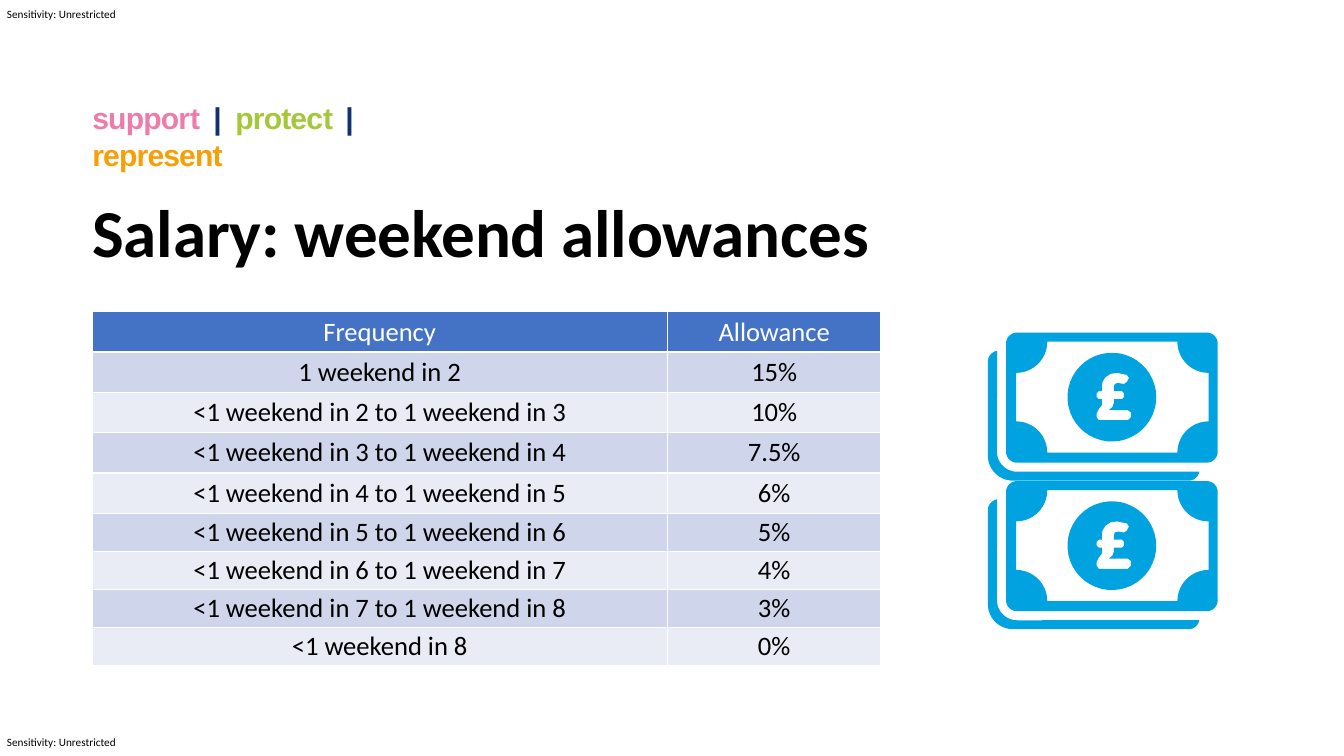
import math

import lxml.etree
import pptx
import pptx.dml.color
import pptx.enum.shapes
import pptx.enum.text
import pptx.oxml.ns
import pptx.util

Pt = pptx.util.Pt
qn = pptx.oxml.ns.qn

BLACK, WHITE, NAVY = "000000", "FFFFFF", "12326E"
PINK, GREEN, ORANGE = "EE7BA9", "A5C73A", "F69F07"
HEADER_BLUE, BANDS, NOTE_BLUE = "4472C4", ("E9EBF5", "CFD5EA"), "00A3E0"

ALLOWANCES = [
    ("Frequency", "Allowance"),
    ("1 weekend in 2", "15%"),
    ("<1 weekend in 2 to 1 weekend in 3", "10%"),
    ("<1 weekend in 3 to 1 weekend in 4", "7.5%"),
    ("<1 weekend in 4 to 1 weekend in 5", "6%"),
    ("<1 weekend in 5 to 1 weekend in 6", "5%"),
    ("<1 weekend in 6 to 1 weekend in 7", "4%"),
    ("<1 weekend in 7 to 1 weekend in 8", "3%"),
    ("<1 weekend in 8", "0%"),
]

# Pound sign outline, in points from the banknote's top left corner
POUND = [
    (102.2, 60.5), (100, 62.6), (79.2, 62.6), (77.8, 60.5), (77.8, 57.6),
    (79.2, 54.7), (81.4, 51.8), (81.4, 47.5), (79.2, 47.5), (77.8, 46.1),
    (77.8, 43.2), (79.2, 41.8), (81.4, 41.8), (81.4, 38.9), (82, 35),
    (84.2, 31.7), (87.5, 29.5), (92.2, 28.8), (99.4, 30.2), (100.8, 32.4),
    (99.4, 35.3), (97.2, 36.7), (92.9, 36), (90.7, 36.7), (90, 38.9),
    (90, 41.8), (95.8, 41.8), (97.2, 43.2), (97.2, 46.1), (95.8, 47.5),
    (90, 47.5), (90, 50.4), (89, 53.2), (86.4, 55.4), (100, 55.4),
    (102.2, 56.9),
]


def color(hex_value):
    return pptx.dml.color.RGBColor.from_string(hex_value)


def style_span(span, size, hex_value, font="Calibri", bold=False, spacing=0):
    span.font.size = Pt(size)
    span.font.name = font
    span.font.bold = bold
    span.font.color.rgb = color(hex_value)
    if spacing:
        span._r.get_or_add_rPr().set("spc", str(round(spacing * 100)))


def add_box(page, left, top, width, height, wrap=True):
    """Add an empty text box without margins and return its paragraph."""
    box = page.shapes.add_textbox(Pt(left), Pt(top), Pt(width), Pt(height))
    frame = box.text_frame
    frame.word_wrap = wrap
    frame.margin_left = frame.margin_top = 0
    frame.margin_right = frame.margin_bottom = 0
    return frame.paragraphs[0]


def add_label(page, top):
    para = add_box(page, 5, top, 79, 9.6, wrap=False)
    para.text = "Sensitivity: Unrestricted"
    style_span(para.runs[0], 8, BLACK)


def add_motto(page):
    para = add_box(page, 66, 71.3, 289, 27)
    para.space_before = Pt(0.7)
    tabs = lxml.etree.SubElement(para._p.get_or_add_pPr(), qn("a:tabLst"))
    for position in (86.4, 102.2, 180.7, 196.6):
        lxml.etree.SubElement(tabs, qn("a:tab"), pos=str(Pt(position)), algn="l")
    for text, hex_value, spacing in (
        ("suppor", PINK, -0.6), ("t\t", PINK, 0), ("|\t", NAVY, 0),
        ("protec", GREEN, -0.6), ("t\t", GREEN, 0), ("|\t", NAVY, 0),
        ("represent", ORANGE, -0.6),
    ):
        span = para.add_run()
        span.text = text
        style_span(span, 21.5, hex_value, "Arial", True, spacing)


def add_title(page):
    para = add_box(page, 66, 136.1, 665, 59)
    para.text = "Salary: weekend allowances"
    para.space_before = Pt(0.7)
    style_span(para.runs[0], 47.9, BLACK, bold=True, spacing=-0.1)


def fill_cell(cell, text, text_color, fill_color):
    cell.margin_left = cell.margin_right = Pt(4.5)
    cell.margin_top = cell.margin_bottom = Pt(2.2)
    cell.vertical_anchor = pptx.enum.text.MSO_ANCHOR.MIDDLE
    # White borders come before the fill in the cell properties
    properties = cell._tc.get_or_add_tcPr()
    for side in ("a:lnL", "a:lnR", "a:lnT", "a:lnB"):
        line = lxml.etree.SubElement(properties, qn(side), w=str(Pt(1)))
        solid = lxml.etree.SubElement(line, qn("a:solidFill"))
        lxml.etree.SubElement(solid, qn("a:srgbClr"), val=WHITE)
    cell.fill.solid()
    cell.fill.fore_color.rgb = color(fill_color)
    para = cell.text_frame.paragraphs[0]
    para.text = text
    para.alignment = pptx.enum.text.PP_ALIGN.CENTER
    style_span(para.runs[0], 19, text_color)


def add_allowance_table(page):
    widths = (411, 152.6)
    heights = [28.8] * 5 + [27.2] * 4
    frame = page.shapes.add_table(
        len(ALLOWANCES), len(widths), Pt(65.7), Pt(222.7),
        Pt(sum(widths)), Pt(sum(heights)))
    table = frame.table
    for column, width in zip(table.columns, widths):
        column.width = Pt(width)
    for index, (row, values) in enumerate(zip(table.rows, ALLOWANCES)):
        row.height = Pt(heights[index])
        text_color = BLACK if index else WHITE
        fill_color = BANDS[index % 2] if index else HEADER_BLUE
        for cell, value in zip(row.cells, values):
            fill_cell(cell, value, text_color, fill_color)


def arc(center_x, center_y, radius, start, end):
    """Points along an arc, angles in degrees clockwise from the right."""
    steps = max(6, abs(end - start) // 8)
    angles = [math.radians(start + (end - start) * i / steps)
              for i in range(steps + 1)]
    return [(center_x + radius * math.cos(a), center_y + radius * math.sin(a))
            for a in angles]


def corners(left, top, right, bottom, radius, concave=False):
    """Rectangle outline with rounded or scooped corners."""
    inset = 0 if concave else radius
    points = []
    for x, y, start in (
        (left + inset, top + inset, 180), (right - inset, top + inset, 270),
        (right - inset, bottom - inset, 0), (left + inset, bottom - inset, 90),
    ):
        if concave:
            points += arc(x, y, radius, start - 90, start - 180)
        else:
            points += arc(x, y, radius, start, start + 90)
    return points


def add_banknote(page, left, top):
    back_note = (
        arc(8, 20.9, 8, 180, 260) + [(6.5, 84.2)]
        + arc(20.9, 85, 14.4, 180, 90) + arc(143.3, 97.9, 7.9, 10, 90)
        + arc(18, 87.8, 18, 90, 180))
    outlines = [
        corners(13, 0, 164.2, 92.9, 7.8),
        corners(20.2, 6.5, 157.7, 85.7, 22.3, concave=True),
        arc(88.6, 46.1, 31.7, 0, 360),
        POUND,
        back_note,
    ]
    builder = None
    for outline in outlines:
        points = [(Pt(left + x), Pt(top + y)) for x, y in outline]
        if builder is None:
            builder = page.shapes.build_freeform(*points[0])
        else:
            builder.move_to(*points[0])
        builder.add_line_segments(points[1:], close=True)
    note = builder.convert_to_shape()
    note.shadow.inherit = False
    note.fill.solid()
    note.fill.fore_color.rgb = color(NOTE_BLUE)
    note.line.fill.background()


def main():
    deck = pptx.Presentation()
    deck.slide_width, deck.slide_height = Pt(960), Pt(540)
    page = deck.slides.add_slide(deck.slide_layouts[6])

    # Sensitivity labels at top and bottom
    for top in (5, 525.4):
        add_label(page, top)

    # Heading and table
    add_motto(page)
    add_title(page)
    add_allowance_table(page)

    # Two stacked banknotes
    for index in range(2):
        add_banknote(page, 705.6, 237.6 + index * 106.1)

    deck.save("out.pptx")


if __name__ == "__main__":
    main()
